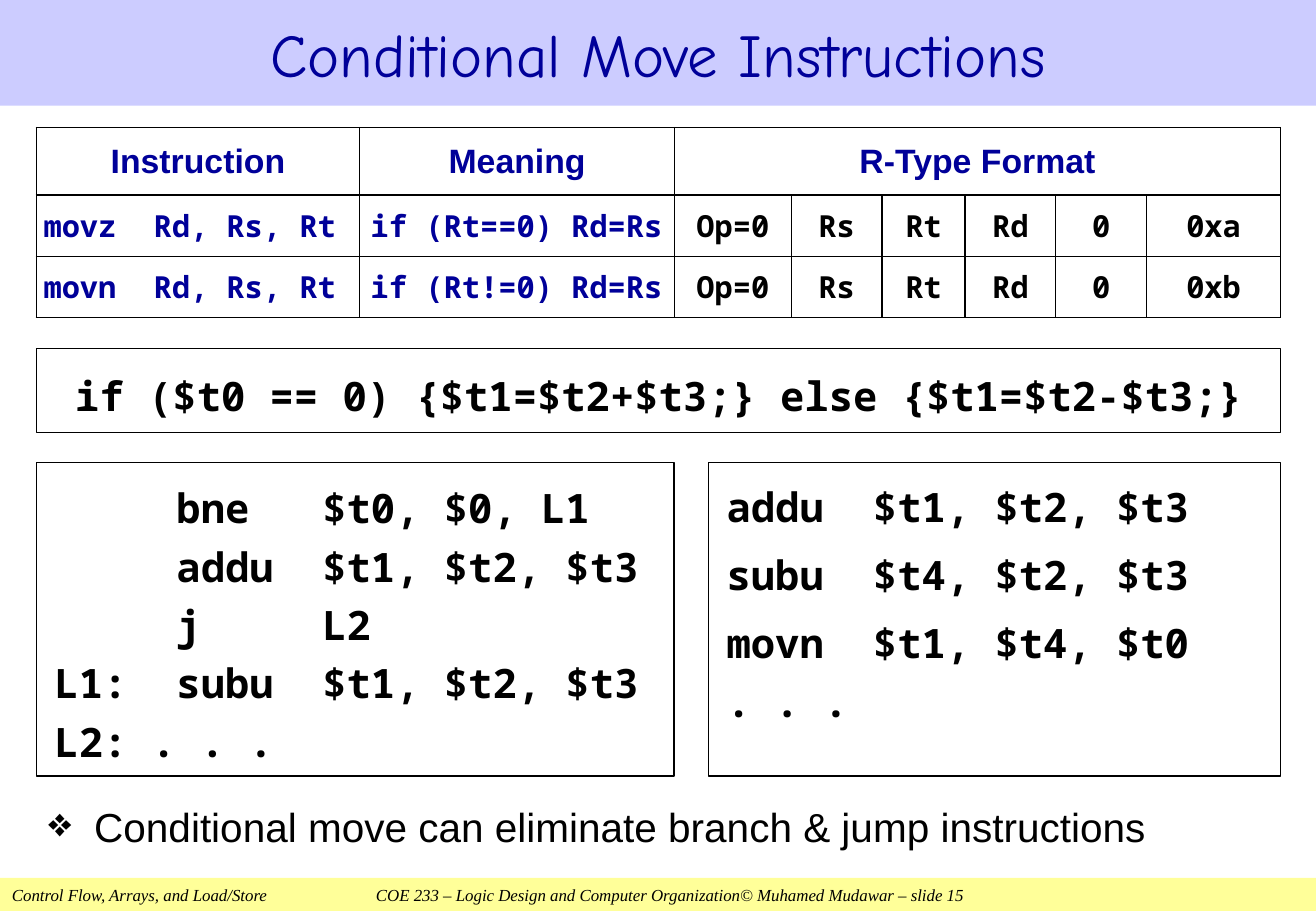
from dataclasses import dataclass
from typing import Optional

import pptx
import pptx.dml.color
import pptx.enum.shapes
import pptx.enum.text
import pptx.oxml
import pptx.oxml.ns
import pptx.util

Cm = pptx.util.Cm
Align = pptx.enum.text.PP_ALIGN
Anchor = pptx.enum.text.MSO_ANCHOR


@dataclass(frozen=True)
class Style:
    font: str
    size: int
    color: str
    bold: bool = False
    italic: bool = False


@dataclass(frozen=True)
class Theme:
    black: str = "000000"
    title_fill: str = "CCCCFF"
    footer_fill: str = "FFFF99"
    border_points: float = 1
    outline_points: float = 0.75
    title: Style = Style("Comic Neue", 36, "000099")
    body: Style = Style("Arial", 24, "000000")
    footer: Style = Style("Times New Roman", 10, "000000", italic=True)
    code: Style = Style("Noto Sans Mono", 24, "000000", bold=True)
    header: Style = Style("Arial", 20, "000099", bold=True)
    instruction: Style = Style("Noto Sans Mono", 18, "000099", bold=True)
    field: Style = Style("Noto Sans Mono", 18, "000000", bold=True)


@dataclass(frozen=True)
class Line:
    text: str
    spacing: float = 1.0


@dataclass(frozen=True)
class Tab:
    position: float
    alignment: str = "l"


@dataclass(frozen=True)
class Box:
    """A rectangle with text; lengths are centimetres, insets are left, top, right, bottom."""
    left: float
    top: float
    width: float
    height: float
    lines: tuple[Line, ...]
    style: Style
    fill: Optional[str] = None
    outline: Optional[str] = None
    align: Align = Align.LEFT
    anchor: Anchor = Anchor.MIDDLE
    insets: tuple[float, ...] = (0.25, 0, 0.25, 0)
    tabs: tuple[Tab, ...] = ()
    bullet: Optional[str] = None
    hanging: float = 0


THEME = Theme()
SLIDE_WIDTH, SLIDE_HEIGHT = 27.51, 19.05
LEFT, WIDTH = 0.76, 26.01
CODE_TOP, CODE_HEIGHT = 9.68, 6.55
RIGHT_CODE_WIDTH = 11.96
FOOTER_HEIGHT = 0.69

BOXES = (
    Box(0, SLIDE_HEIGHT - FOOTER_HEIGHT, SLIDE_WIDTH, FOOTER_HEIGHT,
        (Line("Control Flow, Arrays, and Load/Store\tCOE 233 – Logic Design and Computer "
              "Organization© Muhamed Mudawar – slide 15"),),
        THEME.footer, fill=THEME.footer_fill, tabs=(Tab(13.75, "ctr"),)),
    Box(0, 0, SLIDE_WIDTH, 2.21, (Line("Conditional Move Instructions"),),
        THEME.title, fill=THEME.title_fill, align=Align.CENTER),
    Box(LEFT, 16.56, WIDTH, 1.45,
        (Line("Conditional move can eliminate branch & jump instructions"),),
        THEME.body, bullet="❖", hanging=0.96),
    Box(LEFT, 7.29, WIDTH, 1.75,
        (Line("if ($t0 == 0) {$t1=$t2+$t3;} else {$t1=$t2-$t3;}", 1.2),),
        THEME.code, outline=THEME.black, align=Align.CENTER, insets=(0.38, 0, 0.38, 0)),
    Box(LEFT, CODE_TOP, 13.33, CODE_HEIGHT,
        tuple(Line(text, 1.2) for text in (
            "\tbne\t$t0, $0, L1", "\taddu\t$t1, $t2, $t3", "\tj\tL2",
            "L1:\tsubu\t$t1, $t2, $t3", "L2: . . .")),
        THEME.code, outline=THEME.black, insets=(0.38, 0, 0, 0),
        tabs=(Tab(2.55), Tab(5.6))),
    Box(LEFT + WIDTH - RIGHT_CODE_WIDTH, CODE_TOP, RIGHT_CODE_WIDTH, CODE_HEIGHT,
        (Line("addu\t$t1, $t2, $t3", 1.4), Line("subu\t$t4, $t2, $t3", 1.4),
         Line("movn\t$t1, $t4, $t0", 1.4), Line(". . .", 1.2)),
        THEME.code, outline=THEME.black, anchor=Anchor.TOP, insets=(0.38, 0, 0, 0),
        tabs=(Tab(3.06),)),
)

TABLE_TOP = 2.67
COLUMN_WIDTHS = (6.76, 6.58, 2.44, 1.9, 1.73, 1.9, 1.9, 2.8)
ROW_HEIGHTS = (1.41, 1.28, 1.28)
FORMAT_COLUMN = 2
TABLE_ROWS = (
    ("Instruction", "Meaning", "R-Type Format"),
    ("movz\tRd, Rs, Rt", "if (Rt==0) Rd=Rs", "Op=0", "Rs", "Rt", "Rd", "0", "0xa"),
    ("movn\tRd, Rs, Rt", "if (Rt!=0) Rd=Rs", "Op=0", "Rs", "Rt", "Rd", "0", "0xb"),
)


def rgb(color: str) -> pptx.dml.color.RGBColor:
    return pptx.dml.color.RGBColor.from_string(color)


def add_element(parent, tag: str, **attributes):
    element = parent.makeelement(pptx.oxml.ns.qn(tag), attributes)
    parent.append(element)
    return element


def write_line(paragraph, line: Line, style: Style, align: Align, tabs: tuple[Tab, ...] = ()) -> None:
    paragraph.alignment = align
    paragraph.line_spacing = line.spacing
    run = paragraph.add_run()
    run.text = line.text
    font = run.font
    font.name, font.size = style.font, pptx.util.Pt(style.size)
    font.bold, font.italic = style.bold, style.italic
    font.color.rgb = rgb(style.color)
    if tabs:
        tab_list = add_element(paragraph._p.get_or_add_pPr(), "a:tabLst")
        for tab in tabs:
            add_element(tab_list, "a:tab", pos=str(Cm(tab.position)), algn=tab.alignment)


def add_box(slide, box: Box) -> None:
    shape = slide.shapes.add_shape(
        pptx.enum.shapes.MSO_SHAPE.RECTANGLE,
        Cm(box.left), Cm(box.top), Cm(box.width), Cm(box.height))
    shape.shadow.inherit = False
    if box.fill:
        shape.fill.solid()
        shape.fill.fore_color.rgb = rgb(box.fill)
    else:
        shape.fill.background()
    if box.outline:
        shape.line.color.rgb = rgb(box.outline)
        shape.line.width = pptx.util.Pt(THEME.outline_points)
    else:
        shape.line.fill.background()
    frame = shape.text_frame
    frame.word_wrap = True
    frame.vertical_anchor = box.anchor
    frame.margin_left, frame.margin_top, frame.margin_right, frame.margin_bottom = map(Cm, box.insets)
    for index, line in enumerate(box.lines):
        paragraph = frame.add_paragraph() if index else frame.paragraphs[0]
        if box.bullet:
            properties = paragraph._p.get_or_add_pPr()
            properties.set("marL", str(Cm(box.hanging)))
            properties.set("indent", str(-Cm(box.hanging)))
            add_element(properties, "a:buChar", char=box.bullet)
        write_line(paragraph, line, box.style, box.align, box.tabs)


def style_cell(cell) -> None:
    """Draw black borders on all four sides and leave the cell unfilled."""
    properties = cell._tc.get_or_add_tcPr()
    for side in ("a:lnL", "a:lnR", "a:lnT", "a:lnB"):
        border = add_element(properties, side, w=str(pptx.util.Pt(THEME.border_points)))
        add_element(add_element(border, "a:solidFill"), "a:srgbClr", val=THEME.black)
    cell.fill.background()
    cell.vertical_anchor = Anchor.MIDDLE
    cell.margin_left = cell.margin_top = cell.margin_right = cell.margin_bottom = Cm(0.05)


def add_instruction_table(slide) -> None:
    table = slide.shapes.add_table(
        len(ROW_HEIGHTS), len(COLUMN_WIDTHS), Cm(LEFT), Cm(TABLE_TOP),
        Cm(sum(COLUMN_WIDTHS)), Cm(sum(ROW_HEIGHTS))).table
    table.first_row = table.horz_banding = False
    for column, width in zip(table.columns, COLUMN_WIDTHS):
        column.width = Cm(width)
    for row, height in zip(table.rows, ROW_HEIGHTS):
        row.height = Cm(height)
    for cell in table.iter_cells():
        style_cell(cell)
    table.cell(0, FORMAT_COLUMN).merge(table.cell(0, len(COLUMN_WIDTHS) - 1))
    for row_index, texts in enumerate(TABLE_ROWS):
        for column_index, text in enumerate(texts):
            cell = table.cell(row_index, column_index)
            style, align, tabs = THEME.header, Align.CENTER, ()
            if row_index and column_index < FORMAT_COLUMN:
                style, align = THEME.instruction, Align.LEFT
                cell.margin_left = Cm((0.15, 0.23)[column_index])
                tabs = () if column_index else (Tab(2.3),)
            elif row_index:
                style = THEME.field
            write_line(cell.text_frame.paragraphs[0], Line(text), style, align, tabs)


def main() -> None:
    presentation = pptx.Presentation()
    presentation.slide_width, presentation.slide_height = Cm(SLIDE_WIDTH), Cm(SLIDE_HEIGHT)
    slide = presentation.slides.add_slide(presentation.slide_layouts[6])
    for box in BOXES:
        add_box(slide, box)
    add_instruction_table(slide)
    presentation.save("out.pptx")


if __name__ == "__main__":
    main()
